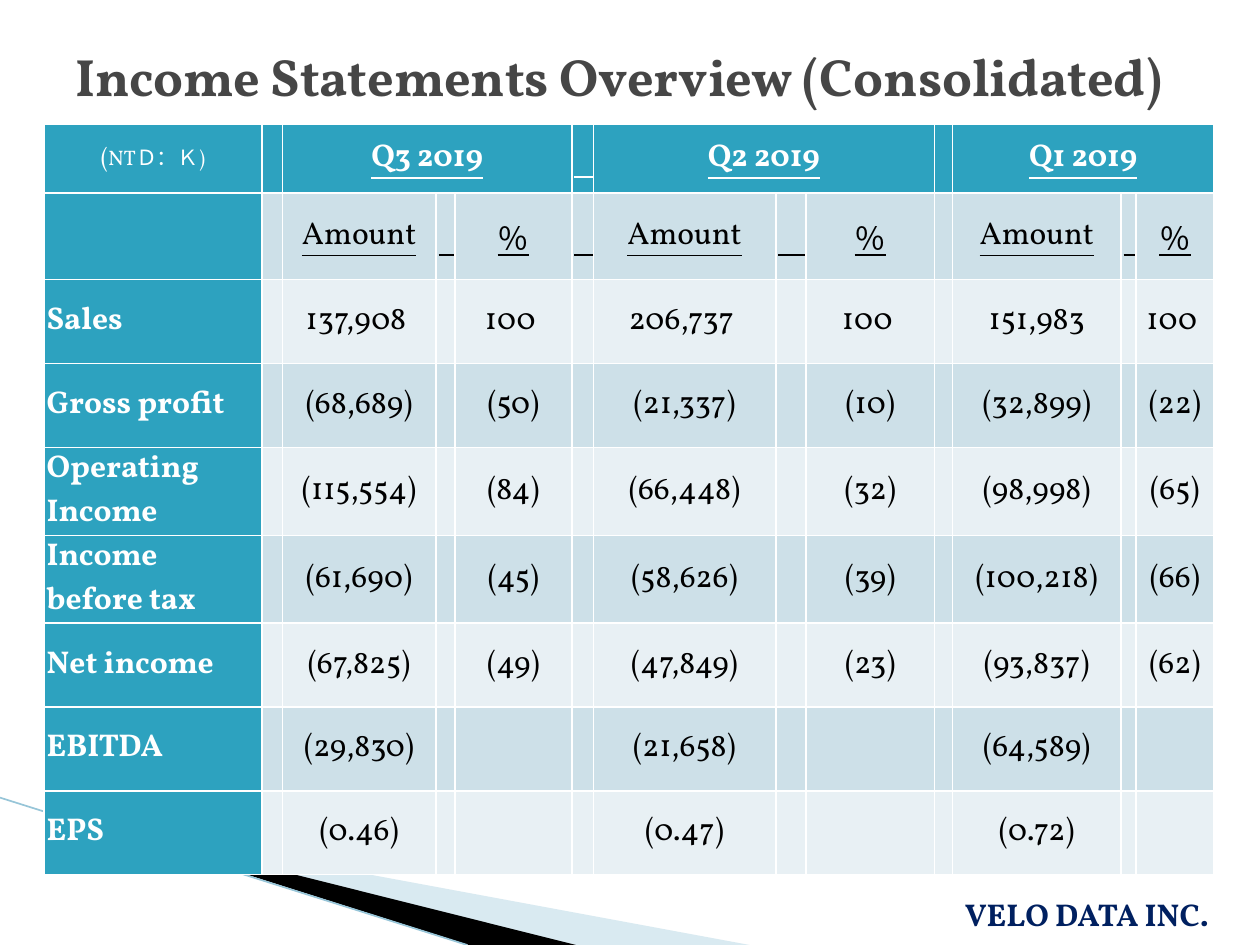
"""Build the consolidated income statements overview slide."""
import pptx
import pptx.dml.color
import pptx.enum.shapes
import pptx.enum.text
import pptx.oxml.ns
import pptx.util
from lxml import etree
from pptx.util import Cm

RGBColor = pptx.dml.color.RGBColor
WHITE = RGBColor(0xFF, 0xFF, 0xFF)
BLACK = RGBColor(0, 0, 0)
TEAL = RGBColor(0x2D, 0xA2, 0xBF)
BAND_DARK = RGBColor(0xCD, 0xE0, 0xE8)
BAND_LIGHT = RGBColor(0xE8, 0xF0, 0xF4)
PALE_BLUE = RGBColor(0xA0, 0xCB, 0xDC)
LINE_BLUE = RGBColor(0x97, 0xC5, 0xD8)
NAVY = RGBColor(0x00, 0x20, 0x60)
GREY = RGBColor(0x46, 0x46, 0x46)
ALIGN = pptx.enum.text.PP_ALIGN
ANCHOR = pptx.enum.text.MSO_ANCHOR
qn = pptx.oxml.ns.qn


def set_font(font, size, color, bold=False, underline=False):
    font.name = "Vollkorn"
    font.size = pptx.util.Pt(size)
    font.color.rgb = color
    font.bold = bold
    font.underline = underline


presentation = pptx.Presentation()
presentation.slide_width = Cm(25.4)
presentation.slide_height = Cm(19.05)
slide = presentation.slides.add_slide(presentation.slide_layouts[5])

ribbons = [
    (PALE_BLUE, [(1.4, 16.51), (15.11, 19.05), (11.58, 19.05)]),
    (BLACK, [(1.35, 16.48), (11.61, 19.05), (9.45, 19.05)]),
]
for color, corners in ribbons:
    points = [(Cm(x), Cm(y)) for x, y in corners]
    builder = slide.shapes.build_freeform(*points[0])
    builder.add_line_segments(points[1:], close=True)
    ribbon = builder.convert_to_shape()
    ribbon.shadow.inherit = False
    ribbon.fill.solid()
    ribbon.fill.fore_color.rgb = color
    ribbon.line.fill.background()
    if color == PALE_BLUE:
        tint = ribbon.fill._xPr.find(qn("a:solidFill"))[0]
        etree.SubElement(tint, qn("a:alpha")).set("val", "40000")

ribbon_edge = slide.shapes.add_connector(
    pptx.enum.shapes.MSO_CONNECTOR.STRAIGHT, Cm(0), Cm(16.08), Cm(9.42), Cm(19.05))
ribbon_edge.line.color.rgb = LINE_BLUE
ribbon_edge.line.width = pptx.util.Pt(0.95)
etree.SubElement(ribbon_edge._element.spPr, qn("a:effectLst"))

column_widths = [4.39, 0.41, 3.1, 0.38, 2.36, 0.43, 3.68, 0.61, 2.59, 0.36, 3.4, 0.3, 1.57]
row_heights = [1.38, 1.75] + [1.69] * 7
value_columns = [2, 4, 6, 8, 10, 12]
quarters = {2: "Q3 2019", 6: "Q2 2019", 10: "Q1 2019"}
statement = [
    ("", "Amount", "％", "Amount", "％", "Amount", "％"),
    ("Sales", "137,908 ", "100 ", "206,737 ", "100 ", "151,983", "100 "),
    ("Gross profit", "(68,689)", "(50)", "(21,337)", "(10)", "(32,899)", "(22)"),
    ("Operating Income", "(115,554)", "(84)", "(66,448)", "(32)", "(98,998)", "(65)"),
    ("Income before tax", "(61,690)", "(45)", "(58,626)", "(39)", "(100,218)", "(66)"),
    ("Net income", "(67,825)", "(49)", "(47,849)", "(23)", "(93,837)", "(62)"),
    ("EBITDA", "(29,830)", "", "(21,658)", "", "(64,589)", ""),
    ("EPS", "(0.46)", "", "(0.47)", "", "(0.72)", ""),
]
underlined_gaps = [(0, 5), (1, 3), (1, 5), (1, 7), (1, 11)]

income_table = slide.shapes.add_table(
    len(row_heights), len(column_widths), Cm(0.89), Cm(2.51),
    Cm(sum(column_widths)), Cm(sum(row_heights))).table
for column, width in zip(income_table.columns, column_widths):
    column.width = Cm(width)
for row, height in zip(income_table.rows, row_heights):
    row.height = Cm(height)

texts = {(0, column): quarter for column, quarter in quarters.items()}
texts.update({position: "　" for position in underlined_gaps})
for row, values in enumerate(statement, start=1):
    for column, value in zip([0] + value_columns, values):
        texts[row, column] = value

for row in range(len(row_heights)):
    for column in range(len(column_widths)):
        cell = income_table.cell(row, column)
        heading = row == 0 or column == 0
        cell.fill.solid()
        cell.fill.fore_color.rgb = TEAL if heading else BAND_DARK if row % 2 else BAND_LIGHT
        cell.margin_left = cell.margin_right = Cm(0.05)
        cell.margin_top = cell.margin_bottom = 0
        cell.vertical_anchor = ANCHOR.MIDDLE
        paragraph = cell.text_frame.paragraphs[0]
        paragraph.alignment = ALIGN.JUSTIFY if column == 0 and row else ALIGN.CENTER
        text = texts.get((row, column), "")
        if text:
            paragraph.add_run().text = text
        set_font(paragraph.font, 18, WHITE if heading else BLACK,
                 bold=heading, underline=row < 2)

for column in quarters:
    income_table.cell(0, column).merge(income_table.cell(0, column + 2))

unit = income_table.cell(0, 0).text_frame.paragraphs[0]
set_font(unit.font, 12, WHITE)
for text, size in [("(", 14), ("NTＤ：Ｋ)", 12)]:
    unit_part = unit.add_run()
    unit_part.text = text
    unit_part.font.size = pptx.util.Pt(size)

company = slide.shapes.add_textbox(Cm(19.2), Cm(17.91), Cm(6.02), Cm(1.02)).text_frame
company.word_wrap = False
company.auto_size = pptx.enum.text.MSO_AUTO_SIZE.SHAPE_TO_FIT_TEXT
company.text = "VELO DATA INC."
set_font(company.paragraphs[0].font, 18, NAVY, bold=True)

title = slide.shapes.title
title.left, title.top, title.width, title.height = Cm(1.27), Cm(0.76), Cm(22.86), Cm(3.18)
title.text_frame.text = "Income Statements Overview (Consolidated)"
title.text_frame.vertical_anchor = ANCHOR.TOP
title.text_frame.paragraphs[0].alignment = ALIGN.LEFT
set_font(title.text_frame.paragraphs[0].font, 30, GREY, bold=True)
slide.shapes._spTree.append(title._element)

presentation.save("out.pptx")
